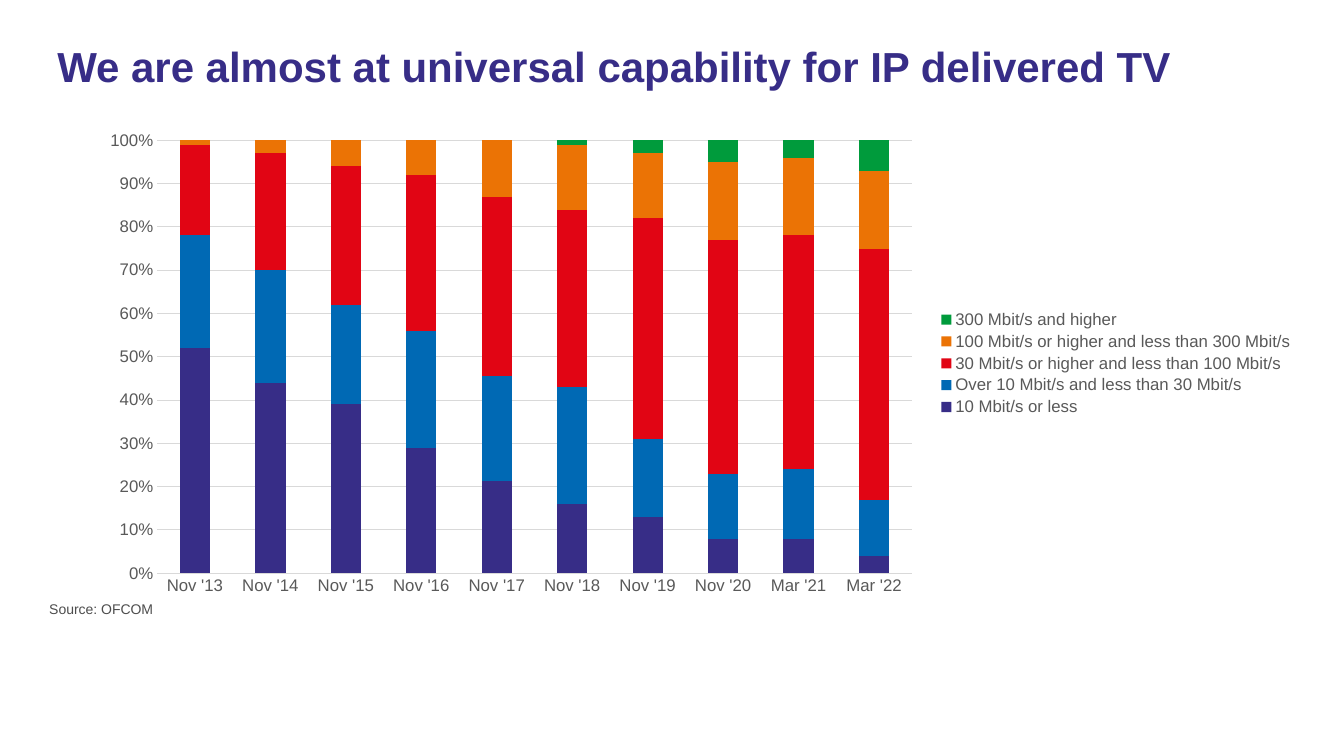
from lxml.etree import SubElement
from pptx import Presentation
from pptx.chart.data import CategoryChartData
from pptx.dml.color import RGBColor
from pptx.enum.chart import XL_CHART_TYPE, XL_LEGEND_POSITION, XL_TICK_MARK
from pptx.enum.text import MSO_ANCHOR
from pptx.oxml.ns import qn
from pptx.util import Inches, Pt

FONT = "Arial"
INDIGO = "372D87"
AXIS_TEXT = "595959"
GRID = "D9D9D9"

DATES = ["Nov '13", "Nov '14", "Nov '15", "Nov '16", "Nov '17",
         "Nov '18", "Nov '19", "Nov '20", "Mar '21", "Mar '22"]
SPEEDS = [
    ("10 Mbit/s or less", INDIGO, [52, 44, 39, 29, 21, 16, 13, 8, 8, 4]),
    ("Over 10 Mbit/s and less than 30 Mbit/s", "0069B4",
     [26, 26, 23, 27, 24, 27, 18, 15, 16, 13]),
    ("30 Mbit/s or higher and less than 100 Mbit/s", "E10514",
     [21, 27, 32, 36, 41, 41, 51, 54, 54, 58]),
    ("100 Mbit/s or higher and less than 300 Mbit/s", "EB7305",
     [1, 3, 6, 8, 13, 15, 15, 18, 18, 18]),
    ("300 Mbit/s and higher", "009B3C", [0, 0, 0, 0, 0, 1, 3, 5, 4, 7]),
]


def color(code):
    return RGBColor.from_string(code)


def style_font(font, size, code, bold=False):
    font.name = FONT
    font.size = Pt(size)
    font.bold = bold
    font.color.rgb = color(code)


def add_text(page, box, text, size=10, code="4D4D4D", bold=False, spacing=1.0):
    frame = page.shapes.add_textbox(*map(Inches, box)).text_frame
    frame.word_wrap = True
    frame.vertical_anchor = MSO_ANCHOR.TOP
    para = frame.paragraphs[0]
    para.line_spacing = spacing
    span = para.add_run()
    span.text = text
    style_font(span.font, size, code, bold)


def place_plot(chart, x, y, w, h):
    """Fix the inner plot area, in fractions of the chart's box."""
    plot_area = chart.element.find(".//" + qn("c:plotArea"))
    for old in plot_area.findall(qn("c:layout")):
        plot_area.remove(old)
    layout = SubElement(plot_area, qn("c:layout"))
    plot_area.insert(0, layout)
    manual = SubElement(layout, qn("c:manualLayout"))
    settings = {"layoutTarget": "inner", "xMode": "edge", "yMode": "edge",
                "x": x, "y": y, "w": w, "h": h}
    for name, value in settings.items():
        SubElement(manual, qn("c:" + name)).set("val", str(value))


def style_line(line):
    line.color.rgb = color(GRID)
    line.width = Pt(0.75)


def style_axes(chart):
    for axis in (chart.category_axis, chart.value_axis):
        axis.major_tick_mark = axis.minor_tick_mark = XL_TICK_MARK.NONE
        style_font(axis.tick_labels.font, 12, AXIS_TEXT)
    style_line(chart.category_axis.format.line)
    values = chart.value_axis
    values.format.line.fill.background()
    values.has_major_gridlines = True
    style_line(values.major_gridlines.format.line)
    values.minimum_scale, values.maximum_scale, values.major_unit = 0, 1, 0.1
    values.tick_labels.number_format = "0%"
    values.tick_labels.number_format_is_linked = False


def add_speed_chart(page, box):
    data = CategoryChartData()
    data.categories = DATES
    for name, _, shares in SPEEDS:
        data.add_series(name, shares)
    chart = page.shapes.add_chart(
        XL_CHART_TYPE.COLUMN_STACKED_100, *map(Inches, box), data).chart
    chart.has_title = False
    style_font(chart.font, 10, "000000")
    plot = chart.plots[0]
    plot.gap_width, plot.overlap = 150, 100
    plot.vary_by_categories = False
    for series, (_, code, _) in zip(plot.series, SPEEDS):
        series.format.fill.solid()
        series.format.fill.fore_color.rgb = color(code)
    style_axes(chart)
    chart.has_legend = True
    chart.legend.position = XL_LEGEND_POSITION.RIGHT
    chart.legend.include_in_layout = False
    style_font(chart.legend.font, 12, AXIS_TEXT)
    place_plot(chart, 0.0587, 0.038, 0.619, 0.897)


def build_slide(deck):
    page = deck.slides.add_slide(deck.slide_layouts[6])
    add_text(page, (0.47, 0.41, 12.4, 1.12),
             "We are almost at universal capability for IP delivered TV",
             size=30, code=INDIGO, bold=True, spacing=0.9)
    add_text(page, (0.39, 5.91, 12.4, 0.33), "Source: OFCOM")
    add_speed_chart(page, (0.85, 1.21, 12.09, 4.79))


def main():
    deck = Presentation()
    deck.slide_width, deck.slide_height = Inches(13.33), Inches(7.5)
    build_slide(deck)
    deck.save("out.pptx")


if __name__ == "__main__":
    main()
